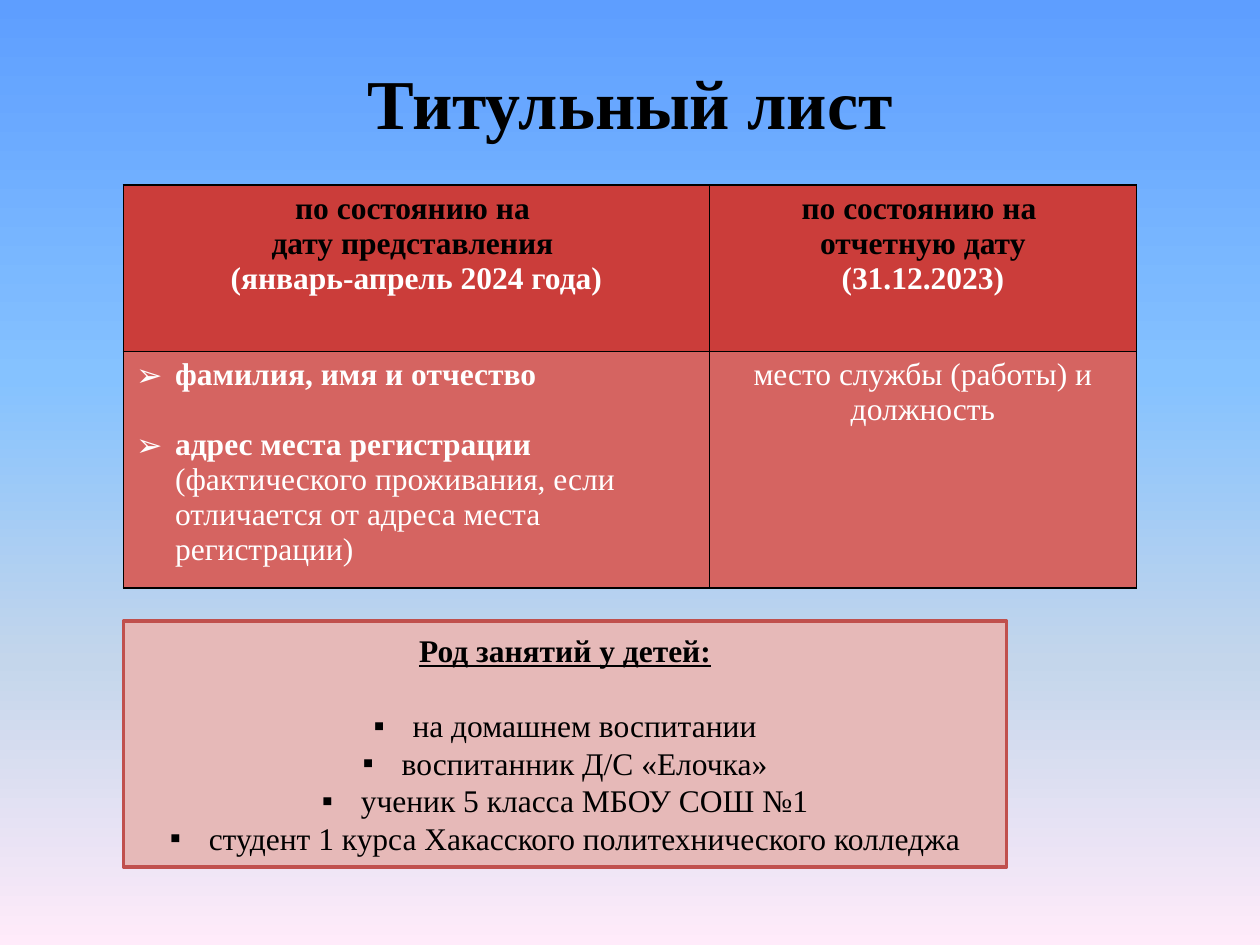
import pptx
import pptx.dml.color
import pptx.enum.shapes
import pptx.enum.text
import pptx.oxml
import pptx.oxml.ns
import pptx.util

Inches, Pt = pptx.util.Inches, pptx.util.Pt
ALIGN, ANCHOR = pptx.enum.text.PP_ALIGN, pptx.enum.text.MSO_ANCHOR
qn = pptx.oxml.ns.qn
FONT = "Times New Roman"
BLACK, WHITE = "000000", "FFFFFF"
LEFT = 0.98


def rgb(value):
    """Turn a hex string into a colour."""
    return pptx.dml.color.RGBColor.from_string(value)


def add_xml(parent, tag, **attrs):
    """Append a drawing element and return it."""
    el = pptx.oxml.parse_xml(f"<{tag} {pptx.oxml.ns.nsdecls('a')}/>")
    for name, value in attrs.items():
        el.set(name, str(value))
    parent.append(el)
    return el


def set_background(slide, stops):
    """Fill the slide from top to bottom with gradient stops."""
    fill = slide.background.fill
    fill.gradient()
    fill.gradient_angle = 270
    gs_list = next(slide.element.iter(qn("a:gsLst")))
    for gs in list(gs_list):
        gs_list.remove(gs)
    for pos, color in stops:
        gs = add_xml(gs_list, "a:gs", pos=pos * 1000)
        add_xml(gs, "a:srgbClr", val=color)


def add_run(p, text, color=BLACK, size=18, bold=False, underline=False):
    """Add one formatted run."""
    r = p.add_run()
    r.text = text
    r.font.name, r.font.size = FONT, Pt(size)
    r.font.bold, r.font.underline = bold, underline
    r.font.color.rgb = rgb(color)


def write(tf, paragraphs, align=ALIGN.CENTER, bullet=None, gaps=None, spacing=None):
    """Write paragraphs of (text, options) runs, with bullets where hung."""
    tf.word_wrap = True
    for i, (hung, runs) in enumerate(paragraphs):
        p = tf.paragraphs[0] if i == 0 else tf.add_paragraph()
        p.alignment = align
        if spacing:
            p.line_spacing = Pt(spacing)
        if gaps and i in gaps:
            p.space_before = Pt(gaps[i])
        if hung:
            pPr = p._p.get_or_add_pPr()
            pPr.set("marL", str(Inches(0.31)))
            pPr.set("indent", str(-Inches(0.31)))
            add_xml(pPr, "a:buFont", typeface="Arial")
            add_xml(pPr, "a:buChar", char=bullet)
        for text, options in runs:
            add_run(p, text, **options)


def add_title(slide, text):
    """Add the centred slide title."""
    tf = slide.shapes.add_textbox(Inches(0.5), Inches(0.3), Inches(9), Inches(1.01)).text_frame
    tf.vertical_anchor = ANCHOR.MIDDLE
    write(tf, [(False, [(text, {"size": 40, "bold": True})])])


def style_cell(cell, color):
    """Fill a cell and draw its borders."""
    cell.fill.solid()
    cell.fill.fore_color.rgb = rgb(color)
    tcPr = cell._tc.get_or_add_tcPr()
    for i, side in enumerate("LRTB"):
        ln = add_xml(tcPr, f"a:ln{side}", w=Pt(1))
        add_xml(add_xml(ln, "a:solidFill"), "a:srgbClr", val=BLACK)
        tcPr.insert(i, ln)


def add_grid(slide, widths, heights, fills):
    """Add an empty styled table."""
    tb = slide.shapes.add_table(len(heights), len(widths), Inches(LEFT), Inches(1.47),
                                Inches(sum(widths)), Inches(sum(heights))).table
    tb.horz_banding = False
    for col, width in zip(tb.columns, widths):
        col.width = Inches(width)
    for row, height, color in zip(tb.rows, heights, fills):
        row.height = Inches(height)
        for cell in row.cells:
            style_cell(cell, color)
    return tb


def add_panel(slide):
    """Add the outlined panel and return its text frame."""
    sp = slide.shapes.add_shape(pptx.enum.shapes.MSO_SHAPE.RECTANGLE, Inches(LEFT),
                                Inches(4.93), Inches(7.01), Inches(1.95))
    sp.shadow.inherit = False
    sp.fill.solid()
    sp.fill.fore_color.rgb = rgb("E6B9B8")
    sp.line.color.rgb = rgb("C0504D")
    sp.line.width = Pt(2)
    sp.text_frame.vertical_anchor = ANCHOR.MIDDLE
    return sp.text_frame


def main():
    """Build the slide."""
    prs = pptx.Presentation()
    prs.slide_width, prs.slide_height = Inches(10), Inches(7.5)
    s = prs.slides.add_slide(prs.slide_layouts[6])
    set_background(s, [(0, "5E9EFF"), (40, "85C2FF"), (70, "C4D6EB"), (100, "FFEBFA")])
    add_title(s, "Титульный лист")

    tb = add_grid(s, [4.65, 3.39], [1.32, 1.76], ["CB3D3A", "D56461"])
    headers = [("по состоянию на ", "дату представления ", "(январь-апрель 2024 года)"),
               ("по состоянию на ", "отчетную дату", "(31.12.2023)")]
    for col, lines in enumerate(headers):
        write(tb.cell(0, col).text_frame,
              [(False, [(text, {"color": color, "bold": True})])
               for text, color in zip(lines, (BLACK, BLACK, WHITE))])
    plain, strong = {"color": WHITE}, {"color": WHITE, "bold": True}
    write(tb.cell(1, 0).text_frame, [
        (True, [("фамилия, имя и отчество", strong)]),
        (True, [("адрес места регистрации ", strong),
                ("(фактического проживания, если отличается от адреса места регистрации)", plain)]),
    ], align=ALIGN.LEFT, bullet="➢", gaps={1: 20})
    write(tb.cell(1, 1).text_frame, [(False, [("место службы (работы) и должность", plain)])])

    items = ["на домашнем воспитании", "воспитанник Д/С «Елочка»", "ученик 5 класса МБОУ СОШ №1",
             "студент 1 курса Хакасского политехнического колледжа"]
    heading = (False, [("Род занятий у детей:", {"bold": True, "underline": True})])
    write(add_panel(s), [heading] + [(True, [(text, {})]) for text in items],
          bullet="▪", gaps={1: 21.5}, spacing=21.5)
    prs.save("out.pptx")


if __name__ == "__main__":
    main()
